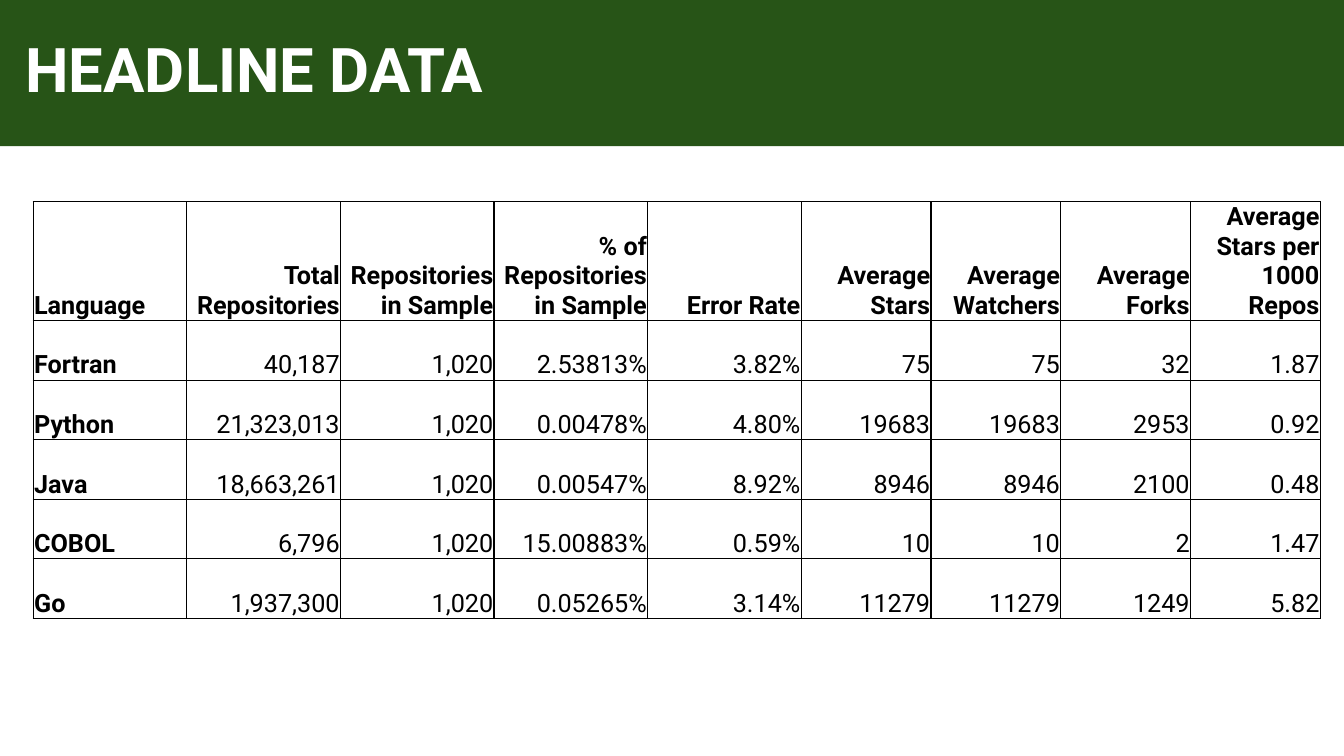
from dataclasses import dataclass
from typing import Any

import lxml.etree
import pptx
import pptx.dml.color
import pptx.enum.text
import pptx.oxml.ns
import pptx.util

Cm = pptx.util.Cm
Align = pptx.enum.text.PP_ALIGN
Anchor = pptx.enum.text.MSO_ANCHOR


@dataclass(frozen=True)
class Theme:
    font: str = "Roboto"
    banner: str = "275417"
    banner_text: str = "FFFFFF"
    table_text: str = "000000"
    border: str = "000000"
    title_size: int = 44
    table_size: int = 18
    border_width: int = 1


@dataclass(frozen=True)
class Column:
    heading: str
    width: float
    align: Any = Align.RIGHT
    bold: bool = False


THEME = Theme()

# Table content
WIDE, NARROW = 3.87, 3.27
COLUMNS = [
    Column("Language", WIDE, Align.LEFT, True),
    Column("Total Repositories", WIDE),
    Column("Repositories in Sample", WIDE),
    Column("% of Repositories in Sample", WIDE),
    Column("Error Rate", WIDE),
    Column("Average Stars", NARROW),
    Column("Average Watchers", NARROW),
    Column("Average Forks", NARROW),
    Column("Average Stars per 1000 Repos", NARROW),
]
LANGUAGES = [
    ("Fortran", "40,187", "1,020", "2.53813%", "3.82%", "75", "75", "32", "1.87"),
    ("Python", "21,323,013", "1,020", "0.00478%", "4.80%", "19683", "19683", "2953", "0.92"),
    ("Java", "18,663,261", "1,020", "0.00547%", "8.92%", "8946", "8946", "2100", "0.48"),
    ("COBOL", "6,796", "1,020", "15.00883%", "0.59%", "10", "10", "2", "1.47"),
    ("Go", "1,937,300", "1,020", "0.05265%", "3.14%", "11279", "11279", "1249", "5.82"),
]
HEADER_HEIGHT, ROW_HEIGHT = 2.98, 1.5


def apply_format(target: Any, values: dict[str, Any]) -> None:
    for name, value in values.items():
        setattr(target, name, value)


def format_text(paragraph: Any, align: Any, size: int, color: str, bold: bool) -> None:
    paragraph.alignment = align
    font = paragraph.runs[0].font
    apply_format(font, {"name": THEME.font, "size": pptx.util.Pt(size), "bold": bold})
    font.color.rgb = pptx.dml.color.RGBColor.from_string(color)


def add_borders(cell: Any) -> None:
    properties = cell._tc.get_or_add_tcPr()
    qualified = pptx.oxml.ns.qn
    for side in ("lnL", "lnR", "lnT", "lnB"):
        line = lxml.etree.SubElement(properties, qualified(f"a:{side}"))
        line.set("w", str(pptx.util.Pt(THEME.border_width)))
        fill = lxml.etree.SubElement(line, qualified("a:solidFill"))
        lxml.etree.SubElement(fill, qualified("a:srgbClr")).set("val", THEME.border)


def add_title(slide: Any, text: str, width: int) -> None:
    title = slide.shapes.title
    apply_format(title, {"left": 0, "top": 0, "width": width, "height": Cm(3.68)})
    title.fill.solid()
    title.fill.fore_color.rgb = pptx.dml.color.RGBColor.from_string(THEME.banner)
    frame = title.text_frame
    frame.text = text
    apply_format(frame, {
        "vertical_anchor": Anchor.MIDDLE,
        "margin_left": Cm(0.64),
        "word_wrap": True,
        "auto_size": pptx.enum.text.MSO_AUTO_SIZE.NONE,
    })
    paragraph = frame.paragraphs[0]
    paragraph.line_spacing = 0.9
    format_text(paragraph, Align.LEFT, THEME.title_size, THEME.banner_text, True)


def add_language_table(slide: Any) -> None:
    rows = [tuple(column.heading for column in COLUMNS), *LANGUAGES]
    width = sum(column.width for column in COLUMNS)
    height = HEADER_HEIGHT + ROW_HEIGHT * len(LANGUAGES)
    table = slide.shapes.add_table(
        len(rows), len(COLUMNS), Cm(0.84), Cm(5.08), Cm(width), Cm(height)
    ).table
    apply_format(table, {"first_row": False, "horz_banding": False})

    for table_column, column in zip(table.columns, COLUMNS):
        table_column.width = Cm(column.width)
    for row_index, values in enumerate(rows):
        is_header = row_index == 0
        table.rows[row_index].height = Cm(HEADER_HEIGHT if is_header else ROW_HEIGHT)
        for column_index, (column, value) in enumerate(zip(COLUMNS, values)):
            cell = table.cell(row_index, column_index)
            cell.text = value
            apply_format(cell, {
                "vertical_anchor": Anchor.BOTTOM,
                "margin_left": Cm(0.02),
                "margin_right": Cm(0.02),
                "margin_top": Cm(0.02),
                "margin_bottom": 0,
            })
            add_borders(cell)
            cell.fill.background()
            format_text(cell.text_frame.paragraphs[0], column.align, THEME.table_size,
                        THEME.table_text, is_header or column.bold)


def main() -> None:
    presentation = pptx.Presentation()
    apply_format(presentation, {"slide_width": Cm(33.87), "slide_height": Cm(19.05)})
    title_only = presentation.slide_layouts[5]
    slide = presentation.slides.add_slide(title_only)

    # Banner
    add_title(slide, "HEADLINE DATA", presentation.slide_width)

    # Repository figures by language
    add_language_table(slide)

    presentation.save("out.pptx")


if __name__ == "__main__":
    main()
